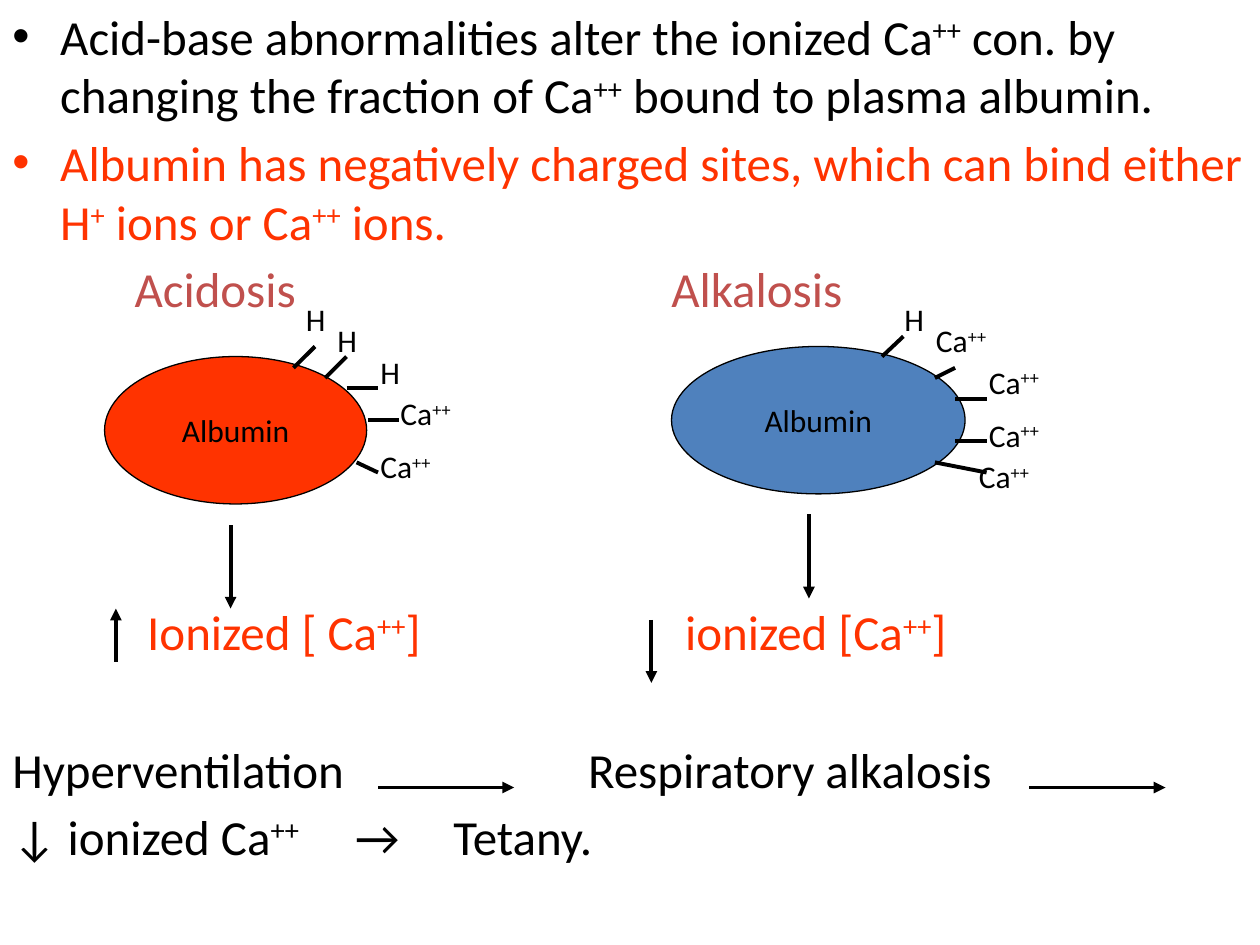
"""Build the slide on acid-base balance and calcium binding to albumin."""
import itertools

import pptx
import pptx.dml.color
import pptx.enum.shapes
import pptx.enum.text
import pptx.oxml.ns
import pptx.util
from lxml import etree

Inches, Pt = pptx.util.Inches, pptx.util.Pt
HUE = {"ink": "000000", "red": "FF3300", "rose": "C0504D", "blue": "4F81BD"}
FONT = "Calibri"

BODY = [
    ("Acid-base abnormalities alter the ionized Ca++ con. by changing the "
     "fraction of Ca++ bound to plasma albumin.", "ink", 0, True, []),
    ("Albumin has negatively charged sites, which can bind either H+ ions "
     "or Ca++ ions.", "red", 5, True, []),
    ("\tAcidosis\tAlkalosis", "rose", 5, False, [0.97, 5.23]),
    ("\tIonized [ Ca++]\tionized [Ca++]", "red", 162.4, False, [1.07, 5.34]),
    ("Hyperventilation\tRespiratory alkalosis", "ink", 44.7, False, [4.57]),
    ("↓ ionized Ca++\t→\tTetany.", "ink", 5, False, [2.72, 3.5]),
]
CELLS = [
    (0.83, 2.83, 2.08, "red"),
    (5.33, 2.75, 2.33, "blue"),
]
IONS = [
    ("H", 2.33, 2.33), ("H", 2.58, 2.5), ("H", 2.92, 2.75),
    ("Ca++", 3.08, 3.08), ("Ca++", 2.92, 3.5),
    ("H", 7.08, 2.33), ("Ca++", 7.33, 2.5), ("Ca++", 7.75, 2.83),
    ("Ca++", 7.75, 3.25), ("Ca++", 7.67, 3.58),
]
BONDS = [
    (2.33, 2.92, 2.5, 2.75), (2.58, 3, 2.75, 2.83), (2.75, 3.08, 3, 3.08),
    (2.92, 3.33, 3.17, 3.33), (2.83, 3.67, 3, 3.75),
    (7, 2.83, 7.17, 2.67), (7.42, 3, 7.58, 2.92), (7.58, 3.17, 7.83, 3.17),
    (7.58, 3.5, 7.83, 3.5), (7.42, 3.67, 7.83, 3.75),
]
ARROWS = [
    (1.83, 4.17, 1.83, 4.83), (6.42, 4.08, 6.42, 4.75),
    (8.17, 6.25, 9.25, 6.25), (3, 6.25, 4.08, 6.25),
    (0.92, 5.25, 0.92, 4.83), (5.17, 4.92, 5.17, 5.42),
]


def tint(name):
    return pptx.dml.color.RGBColor.from_string(HUE[name])


def child(node, tag, **attrs):
    return etree.SubElement(node, pptx.oxml.ns.qn(tag), **attrs)


def write(para, text, size, hue="ink"):
    for sup, chars in itertools.groupby(text, lambda c: c == "+"):
        run = para.add_run()
        run.text = "".join(chars)
        run.font.name, run.font.size = FONT, Pt(size)
        run.font.color.rgb = tint(hue)
        if sup:
            run._r.get_or_add_rPr().set("baseline", "30000")


def add_box(slide, x, y, w, h):
    box = slide.shapes.add_textbox(*map(Inches, (x, y, w, h)))
    box.text_frame.word_wrap = True
    return box.text_frame


def add_body(slide):
    frame = add_box(slide, 0, 0, 10, 7.33)
    for i, (text, hue, gap, mark, tabs) in enumerate(BODY):
        para = frame.add_paragraph() if i else frame.paragraphs[0]
        props = para._p.get_or_add_pPr()
        if mark:
            props.set("marL", str(Inches(0.38)))
            props.set("indent", str(-Inches(0.38)))
            child(props, "a:buFont", typeface="Arial")
            child(props, "a:buChar", char="•")
        if tabs:
            stops = child(props, "a:tabLst")
            for pos in tabs:
                child(stops, "a:tab", pos=str(Inches(pos)), algn="l")
        if gap:
            para.space_before = Pt(gap)
        write(para, text, 28, hue)


def add_cell(slide, x, y, w, hue):
    oval = slide.shapes.add_shape(
        pptx.enum.shapes.MSO_SHAPE.OVAL, *map(Inches, (x, y, w, 1.17)))
    oval.shadow.inherit = False
    oval.fill.solid()
    oval.fill.fore_color.rgb = tint(hue)
    oval.line.color.rgb, oval.line.width = tint("ink"), Pt(0.75)
    frame = oval.text_frame
    frame.word_wrap = False
    frame.vertical_anchor = pptx.enum.text.MSO_ANCHOR.MIDDLE
    para = frame.paragraphs[0]
    para.alignment = pptx.enum.text.PP_ALIGN.CENTER
    write(para, "Albumin", 18)


def add_line(slide, ends, head=False):
    line = slide.shapes.add_connector(
        pptx.enum.shapes.MSO_CONNECTOR.STRAIGHT, *map(Inches, ends))
    line.line.color.rgb, line.line.width = tint("ink"), Pt(2.25)
    if head:
        child(line.line._get_or_add_ln(), "a:tailEnd", type="triangle")
    child(line._element.spPr, "a:effectLst")


def main():
    deck = pptx.Presentation()
    deck.slide_width, deck.slide_height = Inches(10), Inches(7.5)
    slide = deck.slides.add_slide(deck.slide_layouts[6])
    add_body(slide)
    for cell in CELLS:
        add_cell(slide, *cell)
    for text, x, y in IONS:
        frame = add_box(slide, x, y, 0.58 if text == "H" else 1.17, 0.5)
        write(frame.paragraphs[0], text, 18)
    for ends in BONDS:
        add_line(slide, ends)
    for ends in ARROWS:
        add_line(slide, ends, head=True)
    deck.save("out.pptx")


if __name__ == "__main__":
    main()
